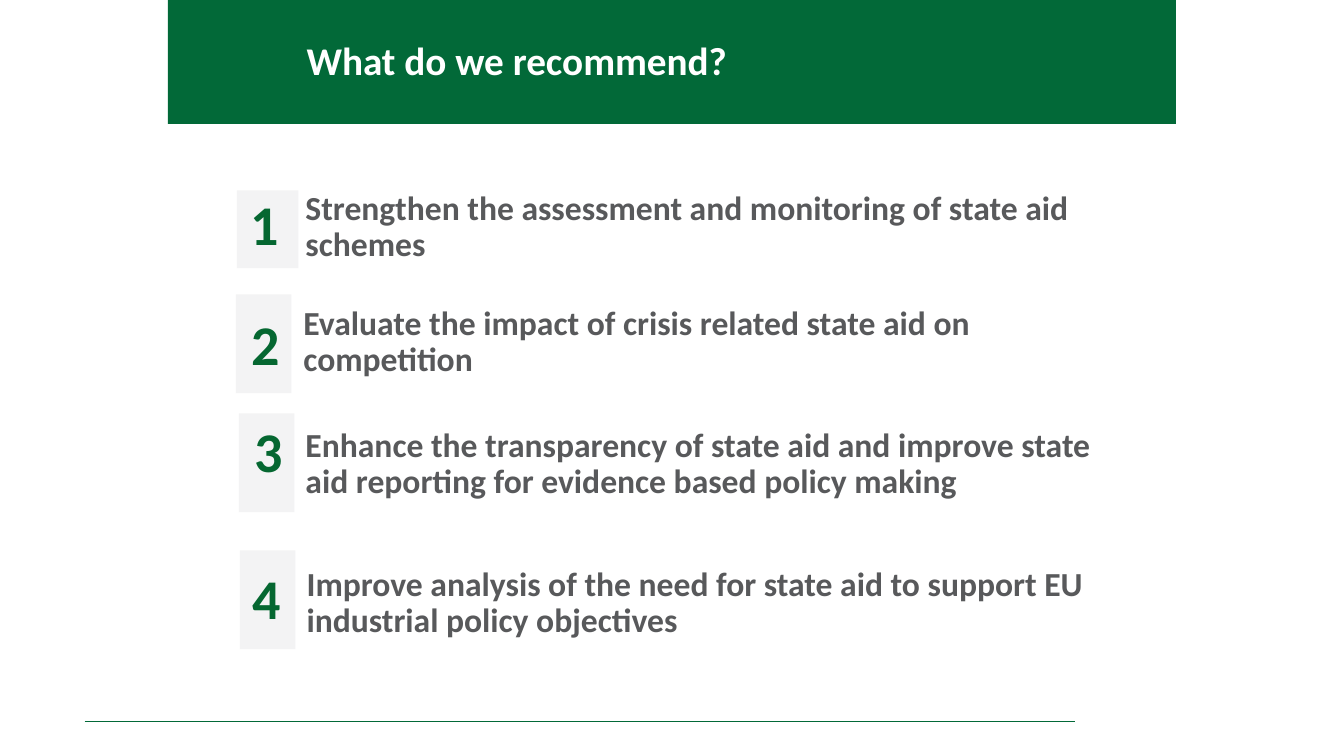
from dataclasses import dataclass

from lxml.etree import SubElement
from pptx import Presentation
from pptx.dml.color import RGBColor
from pptx.enum.shapes import MSO_CONNECTOR, MSO_SHAPE
from pptx.enum.text import MSO_ANCHOR, PP_ALIGN
from pptx.oxml.ns import qn
from pptx.util import Inches, Pt


@dataclass(frozen=True)
class Theme:
    font: str = "Calibri"
    green: str = "026938"
    digit: str = "056731"
    grey: str = "58595B"
    tile: str = "F3F3F4"
    white: str = "FFFFFF"
    title_size: int = 28
    digit_size: int = 40
    body_size: int = 24
    leading: float = 0.9


THEME = Theme()

# All lengths are percentages of the slide's width or height.
TITLE = "What do we recommend?"
BANNER = (12.5, 0, 75, 16.4)
TITLE_BOX = (22.81, 5.87, 62.64, 5.2)
FOOTER_RULE = (6.3, 79.97, 95.47)  # left, right, height on the slide
DIGIT_SIZE = (2.63, 7.33)

# wording, tile box, digit's left and top, wording box
RECOMMENDATIONS = [
    ("Strengthen the assessment and monitoring of state aid schemes",
     (17.63, 25.2, 4.58, 10.27), (18.38, 26.13), (22.73, 25.33, 60.02, 11.47)),
    ("Evaluate the impact of crisis related state aid on competition",
     (17.55, 38.93, 4.13, 13.07), (18.45, 42), (22.58, 40.53, 62.04, 9.87)),
    ("Enhance the transparency of state aid and improve state aid reporting "
     "for evidence based policy making",
     (17.78, 54.67, 4.13, 13.07), (18.68, 56.13), (22.73, 56.67, 61.82, 9.2)),
    ("Improve analysis of the need for state aid to support EU industrial "
     "policy objectives",
     (17.85, 72.8, 4.13, 13.07), (18.53, 75.6), (22.81, 75.07, 61.82, 9.2)),
]

prs = Presentation()
prs.slide_width, prs.slide_height = Inches(13.33), Inches(7.5)
s = prs.slides.add_slide(prs.slide_layouts[6])


def across(share):
    return round(prs.slide_width * share / 100)


def down(share):
    return round(prs.slide_height * share / 100)


def place(box):
    left, top, width, height = box
    return across(left), down(top), across(width), down(height)


def add_block(box, color):
    sp = s.shapes.add_shape(MSO_SHAPE.RECTANGLE, *place(box))
    sp.shadow.inherit = False
    sp.fill.solid()
    sp.fill.fore_color.rgb = RGBColor.from_string(color)
    sp.line.fill.background()


def add_text(text, box, size, color, align=PP_ALIGN.LEFT, anchor=MSO_ANCHOR.TOP):
    tf = s.shapes.add_textbox(*place(box)).text_frame
    tf.word_wrap = True
    tf.vertical_anchor = anchor
    tf.margin_left = tf.margin_right = tf.margin_top = tf.margin_bottom = 0
    p = tf.paragraphs[0]
    p.alignment = align
    p.line_spacing = THEME.leading
    r = p.add_run()
    r.text = text
    r.font.name = THEME.font
    r.font.size = Pt(size)
    r.font.bold = True
    r.font.color.rgb = RGBColor.from_string(color)


def add_rule(left, right, height):
    line = s.shapes.add_connector(MSO_CONNECTOR.STRAIGHT, across(left), down(height),
                                  across(right), down(height))
    line.line.color.rgb = RGBColor.from_string(THEME.green)
    line.line.width = Pt(0.75)
    SubElement(line.element.spPr, qn("a:effectLst"))


add_rule(*FOOTER_RULE)
add_block(BANNER, THEME.green)
add_text(TITLE, TITLE_BOX, THEME.title_size, THEME.white, anchor=MSO_ANCHOR.BOTTOM)

for number, (wording, tile, digit_at, wording_box) in enumerate(RECOMMENDATIONS, 1):
    add_block(tile, THEME.tile)
    add_text(str(number), digit_at + DIGIT_SIZE, THEME.digit_size, THEME.digit,
             align=PP_ALIGN.CENTER)
    add_text(wording, wording_box, THEME.body_size, THEME.grey)

prs.save("out.pptx")
